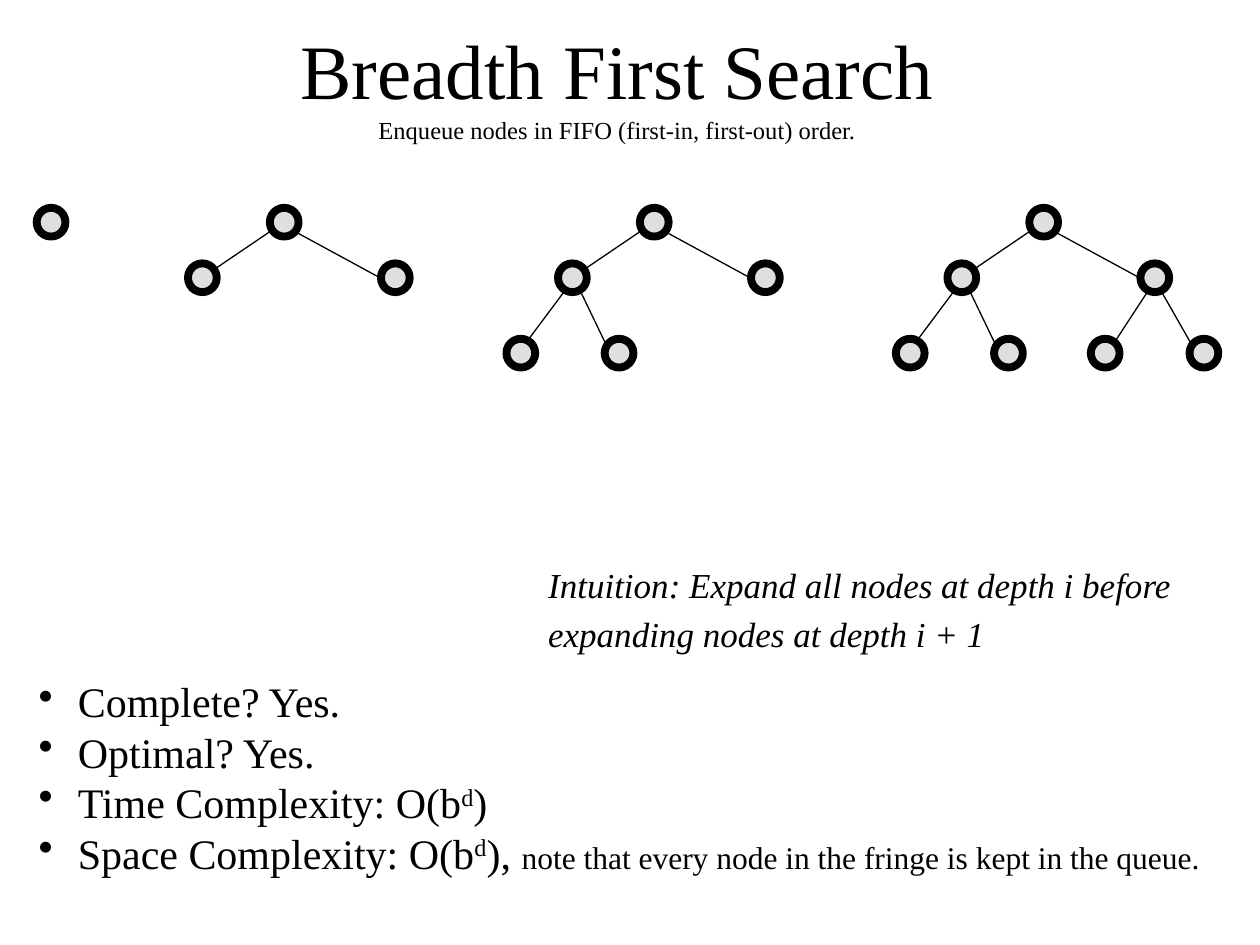
"""Build a slide on breadth first search with four growing trees."""
import dataclasses
import typing

import pptx
import pptx.dml.color
import pptx.enum.shapes
import pptx.enum.text
import pptx.oxml.ns
import pptx.oxml.xmlchemy
import pptx.slide
import pptx.util
from lxml import etree

Cm = pptx.util.Cm
Pt = pptx.util.Pt
Align = pptx.enum.text.PP_ALIGN
Anchor = pptx.enum.text.MSO_ANCHOR
qn = pptx.oxml.ns.qn


@dataclasses.dataclass(frozen=True)
class Theme:
    """Colours, type sizes and line widths."""

    font: str = "Times New Roman"
    ink: str = "000000"
    disc: str = "C0C0C0"
    alpha: int = 50000
    title: float = 44
    order: float = 14
    hint: float = 20
    body: float = 24
    note: float = 18
    ring: float = 4.5
    edge: float = 0.75


class Run(typing.NamedTuple):
    """A stretch of text in one size."""

    text: str
    size: float
    raised: bool = False


class Box(typing.NamedTuple):
    """A frame in centimetres."""

    left: float
    top: float
    width: float
    height: float


class Node(typing.NamedTuple):
    """A node and the line from its parent, measured from the root."""

    left: float
    top: float
    edge: tuple[float, float, float, float] | None = None


THEME = Theme()
SIZE = 0.58
ROOT_TOP = 4.19
NODES = (
    Node(0, 0),
    Node(-1.65, 1.12, (0.03, 0.46, -1.12, 1.24)),
    Node(2.24, 1.12, (0.51, 0.48, 2.24, 1.42)),
    Node(-2.69, 2.64, (-1.52, 1.68, -2.26, 2.67)),
    Node(-0.71, 2.64, (-1.19, 1.7, -0.69, 2.74)),
    Node(1.24, 2.64, (2.39, 1.68, 1.73, 2.69)),
    Node(3.23, 2.64, (2.67, 1.7, 3.28, 2.77)),
)
TREES = ((0.74, 1), (5.44, 3), (12.9, 5), (20.75, 7))


def tint(text: str) -> pptx.dml.color.RGBColor:
    """Return the colour for a hex string."""
    return pptx.dml.color.RGBColor.from_string(text)


def put_text(slide: pptx.slide.Slide, box: Box, lines: list[list[Run]], *,
             align: Align = Align.LEFT, anchor: Anchor = Anchor.TOP,
             pitch: float | None = None, slant: bool = False,
             bullet: str = "", indent: float = 0) -> None:
    """Write lines of runs in a text box."""
    frame = slide.shapes.add_textbox(*map(Cm, box)).text_frame
    frame.word_wrap = True
    frame.vertical_anchor = anchor
    for index, line in enumerate(lines):
        para = frame.add_paragraph() if index else frame.paragraphs[0]
        para.alignment = align
        if pitch:
            para.line_spacing = Pt(pitch)
        if bullet:
            props = para._p.get_or_add_pPr()
            props.set("marL", str(Cm(indent)))
            props.set("indent", str(-Cm(indent)))
            etree.SubElement(props, qn("a:buChar")).set("char", bullet)
        for part in line:
            run = para.add_run()
            run.text = part.text
            run.font.name = THEME.font
            run.font.size = Pt(part.size)
            run.font.italic = slant
            run.font.color.rgb = tint(THEME.ink)
            if part.raised:
                run._r.get_or_add_rPr().set("baseline", "30000")


def draw_node(slide: pptx.slide.Slide, left: float, top: float) -> None:
    """Draw a ringed disc."""
    disc = slide.shapes.add_shape(
        pptx.enum.shapes.MSO_SHAPE.OVAL, Cm(left), Cm(top), Cm(SIZE), Cm(SIZE))
    disc.shadow.inherit = False
    disc.fill.solid()
    disc.fill.fore_color.rgb = tint(THEME.disc)
    shade = disc._element.spPr.find(qn("a:solidFill"))[0]
    etree.SubElement(shade, qn("a:alpha")).set("val", str(THEME.alpha))
    disc.line.color.rgb = tint(THEME.ink)
    disc.line.width = Pt(THEME.ring)


def draw_edge(slide: pptx.slide.Slide, root: float,
              edge: tuple[float, float, float, float]) -> None:
    """Draw the line from a parent to a child."""
    x1, y1, x2, y2 = edge
    line = slide.shapes.add_connector(
        pptx.enum.shapes.MSO_CONNECTOR.STRAIGHT,
        Cm(root + x1), Cm(ROOT_TOP + y1), Cm(root + x2), Cm(ROOT_TOP + y2))
    line.line.color.rgb = tint(THEME.ink)
    line.line.width = Pt(THEME.edge)
    etree.SubElement(line._element.spPr, qn("a:effectLst"))


def draw_tree(slide: pptx.slide.Slide, root: float, count: int) -> None:
    """Draw the first nodes of the tree in breadth first order."""
    for node in NODES[:count]:
        draw_node(slide, root + node.left, ROOT_TOP + node.top)
    for node in NODES[:count]:
        if node.edge:
            draw_edge(slide, root, node.edge)


def main() -> None:
    """Build and save the slide."""
    deck = pptx.Presentation()
    deck.slide_width, deck.slide_height = Cm(25.4), Cm(19.05)
    slide = deck.slides.add_slide(deck.slide_layouts[6])
    put_text(slide, Box(1.65, 0.1, 21.59, 3.18), [
        [Run("Breadth First Search", THEME.title)],
        [Run("Enqueue nodes in FIFO (first-in, first-out) order.", THEME.order)],
    ], align=Align.CENTER, anchor=Anchor.MIDDLE)
    for root, count in TREES:
        draw_tree(slide, root, count)
    power = Run("d", THEME.body, True)
    put_text(slide, Box(0.53, 13.5, 24.31, 4.32), [
        [Run("Complete? Yes.", THEME.body)],
        [Run("Optimal? Yes.", THEME.body)],
        [Run("Time Complexity: O(b", THEME.body), power, Run(")", THEME.body)],
        [Run("Space Complexity: O(b", THEME.body), power, Run("), ", THEME.body),
         Run("note that every node in the fringe is kept in the queue.", THEME.note)],
    ], pitch=28.8, bullet="•", indent=0.79)
    put_text(slide, Box(10.8, 11.1, 13.49, 1.96), [
        [Run("Intuition: Expand all nodes at depth i before "
             "expanding nodes at depth i + 1", THEME.hint)],
    ], pitch=28, slant=True)
    deck.save("out.pptx")


if __name__ == "__main__":
    main()
